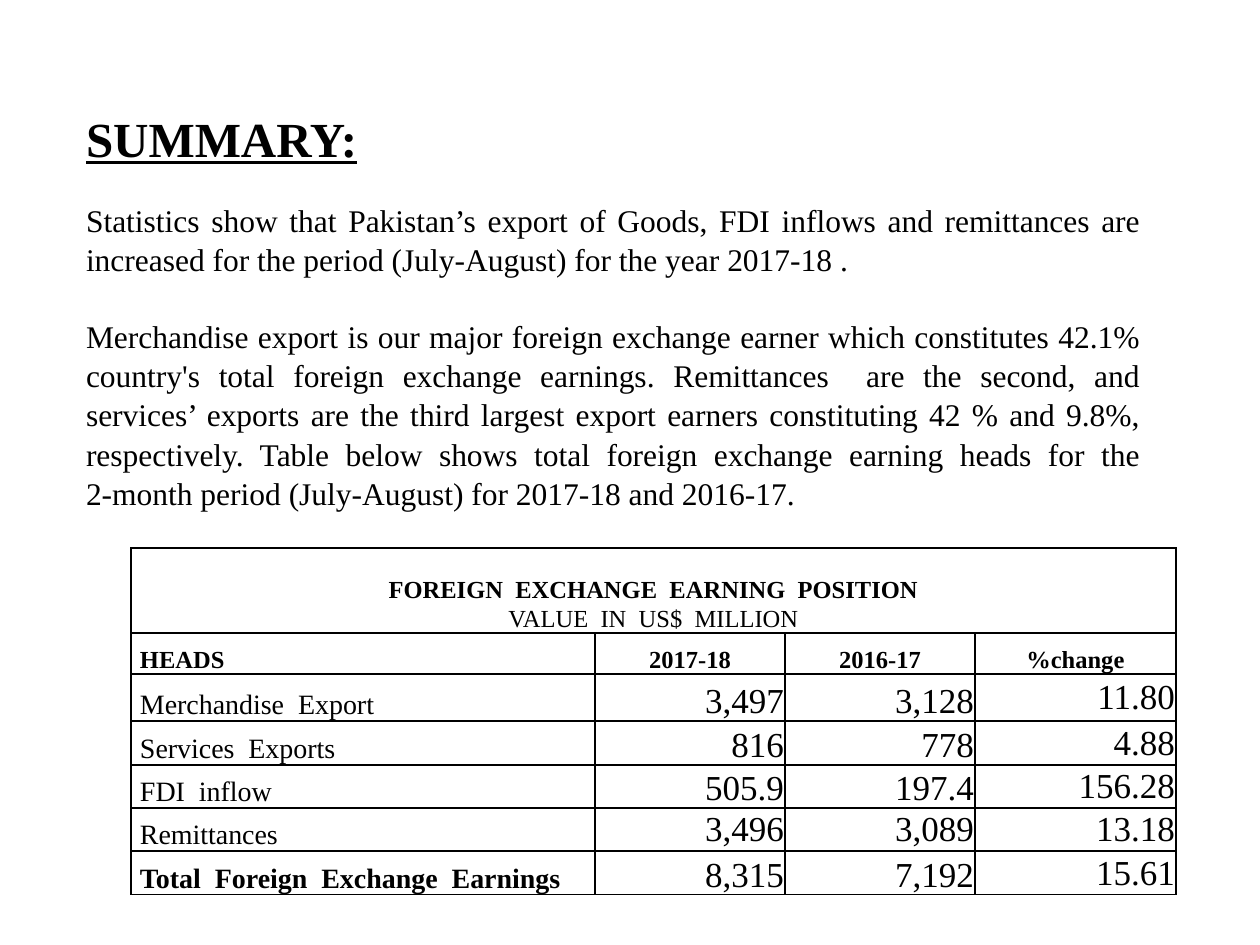
from lxml.etree import SubElement as Sub
from pptx import Presentation as Deck
from pptx.dml.color import RGBColor as Rgb
from pptx.enum.text import MSO_ANCHOR as Anc, MSO_AUTO_SIZE as Fit, PP_ALIGN as Al
from pptx.oxml.ns import qn
from pptx.util import Pt

PX = 914400 // 126
FACE = "Times New Roman"
HUES = {"ink": "000000", "page": "FFFFFF"}
INSET = {"margin_left": 9 * PX, "margin_right": 9 * PX, "margin_top": 0, "margin_bottom": 0}
TIGHT = {"margin_left": PX, "margin_right": PX, "margin_top": PX, "margin_bottom": 0}
FRAME = {"word_wrap": True, "auto_size": Fit.NONE, "vertical_anchor": Anc.TOP,
         "margin_left": 0, "margin_right": 0, "margin_top": 6 * PX, "margin_bottom": 6 * PX}
BODY = [
    "Statistics show that Pakistan’s export of Goods, FDI inflows and remittances are "
    "increased for the period (July-August) for the year 2017-18 .",
    "Merchandise export is our major foreign exchange earner which constitutes 42.1% "
    "country's total foreign exchange earnings. Remittances  are the second, and "
    "services’ exports are the third largest export earners constituting 42 % and 9.8%, "
    "respectively. Table below shows total foreign exchange earning heads for the\v"
    "2-month period (July-August) for 2017-18 and 2016-17.",
]
HEAD = ["HEADS", "2017-18", "2016-17", "%change"]
ROWS = [
    ["Merchandise  Export", "3,497", "3,128", "11.80"],
    ["Services  Exports", "816", "778", "4.88"],
    ["FDI  inflow", "505.9", "197.4", "156.28"],
    ["Remittances", "3,496", "3,089", "13.18"],
    ["Total  Foreign  Exchange  Earnings", "8,315", "7,192", "15.61"],
]
COLS = [464, 190, 190, 201]
TALL = [85, 41, 47, 44, 43, 43, 44]


def put(obj, fmt):
    """Set each attribute named in a dict."""
    for key, val in fmt.items():
        setattr(obj, key, val)


def write(par, text, size, bold=False, line=False, **fmt):
    """Fill one paragraph and format it."""
    par.text = text
    put(par, {"space_before": 0, **fmt})
    for run in par.runs:
        put(run.font, {"name": FACE, "size": Pt(size), "bold": bold, "underline": line})
        run.font.color.rgb = Rgb.from_string(HUES["ink"])


def place(shape, left, top, width, height):
    """Move a placeholder and set up its frame."""
    put(shape, {"left": left * PX, "top": top * PX,
                "width": width * PX, "height": height * PX})
    put(shape.text_frame, FRAME)
    return shape.text_frame


def title(slide):
    """Add the heading."""
    frame = place(slide.shapes.title, 86, 102, 1055, 62)
    write(frame.paragraphs[0], "SUMMARY:", 28, True, True, alignment=Al.JUSTIFY)


def body(slide):
    """Add the two plain paragraphs."""
    frame = place(slide.placeholders[1], 86, 193, 1055, 317)
    frame.text = "\n".join(BODY)
    for par, text in zip(frame.paragraphs, BODY):
        write(par, text, 18, alignment=Al.JUSTIFY, line_spacing=1.04, space_after=Pt(21.6))
        prop = par._p.get_or_add_pPr()
        prop.set("marL", "0")
        prop.set("indent", "0")
        Sub(prop, qn("a:buNone"))


def edge(cell):
    """Draw the four borders and the plain fill."""
    prop = cell._tc.get_or_add_tcPr()
    for side in ("lnL", "lnR", "lnT", "lnB"):
        line = Sub(prop, qn(f"a:{side}"), w=str(Pt(1)))
        Sub(Sub(line, qn("a:solidFill")), qn("a:srgbClr"), val=HUES["ink"])
    cell.fill.solid()
    cell.fill.fore_color.rgb = Rgb.from_string(HUES["page"])


def label(cell, text, size, bold, side=Al.LEFT):
    """Fill a heading cell, one paragraph per line."""
    put(cell, {**INSET, "vertical_anchor": Anc.BOTTOM})
    cell.text = text
    for num, par in enumerate(cell.text_frame.paragraphs):
        write(par, par.text, size, bold and num == 0, alignment=side, line_spacing=1.07)


def value(cell, text, mid):
    """Fill a number cell."""
    put(cell, {**TIGHT, "vertical_anchor": Anc.MIDDLE if mid else Anc.BOTTOM})
    write(cell.text_frame.paragraphs[0], text, 20, alignment=Al.RIGHT)


def table(slide):
    """Add the earnings table."""
    grid = slide.shapes.add_table(len(TALL), len(COLS), 131 * PX, 548 * PX,
                                  sum(COLS) * PX, sum(TALL) * PX).table
    put(grid, {"first_row": False, "horz_banding": False})
    for col, size in zip(grid.columns, COLS):
        col.width = size * PX
    for row, size in zip(grid.rows, TALL):
        row.height = size * PX
    for cell in grid.iter_cells():
        edge(cell)
    top = grid.cell(0, 0)
    top.merge(grid.cell(0, len(COLS) - 1))
    label(top, "FOREIGN  EXCHANGE  EARNING  POSITION\nVALUE  IN  US$  MILLION",
          14, True, Al.CENTER)
    for num, text in enumerate(HEAD):
        label(grid.cell(1, num), text, 14, True, Al.CENTER if num else Al.LEFT)
    for pos, (name, *nums) in enumerate(ROWS, 2):
        label(grid.cell(pos, 0), name, 16, name.startswith("Total"))
        for num, text in enumerate(nums, 1):
            value(grid.cell(pos, num), text, num == 3 or name == "Remittances")


def main():
    """Build and save the slide."""
    deck = Deck()
    put(deck, {"slide_width": 1260 * PX, "slide_height": 945 * PX})
    slide = deck.slides.add_slide(deck.slide_layouts[1])
    title(slide)
    body(slide)
    table(slide)
    deck.save("out.pptx")


if __name__ == "__main__":
    main()
